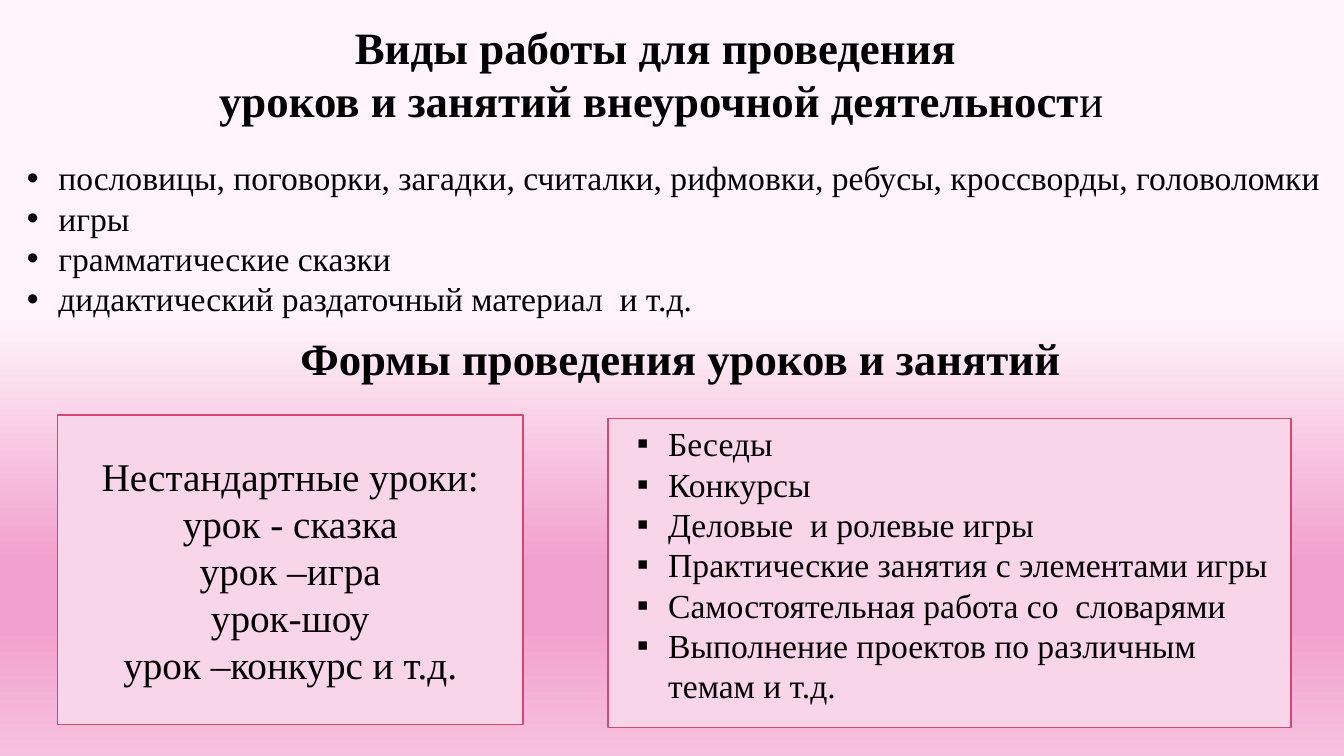
"""Build a slide on kinds of classroom work and forms of lessons."""
from dataclasses import dataclass

from lxml import etree
from pptx import Presentation
from pptx import util as u
from pptx.dml import color
from pptx.enum import shapes, text
from pptx.oxml import ns

COLORS = {
    "text": "000000",
    "panel": "F9D5E9",
    "border": "D54773",
    "pale": "FEF4FA",
    "deep": "F2A1CE",
    "soft": "F7C0DE",
}
BACKGROUND_STOPS = [(42, "pale"), (74, "deep"), (83, "deep"), (100, "soft")]
FONT = "Times New Roman"
BULLET_INDENT = u.Cm(0.79)


@dataclass
class Run:
    """A piece of text with one weight."""
    words: str
    bold: bool = False


@dataclass
class Block:
    """A text block, optionally drawn as a bordered panel."""
    box: tuple[float, float, float, float]
    lines: list[list[Run]]
    size: int = 24
    centered: bool = False
    bullet: str = ""
    wrap: bool = False
    panel: bool = False


def plain(*lines: str) -> list[list[Run]]:
    """Turn strings into one-run lines."""
    return [[Run(line)] for line in lines]


BLOCKS = [
    Block((5.16, 0.36, 23.01, 3.0), [
        [Run("Виды работы для проведения ", True)],
        [Run("уроков и занятий внеурочной деятельност", True), Run("и")],
    ], size=32, centered=True),
    Block((0.43, 3.84, 33.45, 5.13), plain(
        "пословицы, поговорки, загадки, считалки, рифмовки, ребусы, кроссворды, головоломки",
        "игры",
        "грамматические сказки",
        "дидактический раздаточный материал  и т.д.",
    ), bullet="•"),
    Block((7.32, 8.2, 20.14, 1.63),
          [[Run("Формы проведения уроков и занятий", True)]], size=32),
    Block((1.45, 10.46, 11.73, 7.8), plain(
        "Нестандартные уроки:",
        "урок - сказка",
        "урок –игра",
        "урок-шоу",
        "урок –конкурс и т.д.",
    ), size=28, centered=True, wrap=True, panel=True),
    Block((15.32, 10.54, 17.22, 7.8), [], panel=True),
    Block((15.8, 10.54, 16.74, 7.44), plain(
        "Беседы",
        "Конкурсы",
        "Деловые  и ролевые игры",
        "Практические занятия с элементами игры",
        "Самостоятельная работа со  словарями",
        "Выполнение проектов по различным темам и т.д.",
    ), bullet="▪", wrap=True),
]


def rgb(name: str) -> color.RGBColor:
    """Look up a palette colour."""
    return color.RGBColor.from_string(COLORS[name])


def paint_background(slide) -> None:
    """Fill the background with a vertical gradient."""
    fill = slide.background.fill
    fill.gradient()
    fill.gradient_angle = 270
    stops = slide._element.find(".//" + ns.qn("a:gsLst"))
    for stop in list(stops):
        stops.remove(stop)
    for percent, name in BACKGROUND_STOPS:
        stop = etree.SubElement(stops, ns.qn("a:gs"), pos=str(percent * 1000))
        etree.SubElement(stop, ns.qn("a:srgbClr"), val=COLORS[name])


def add_bullet(paragraph, bullet: str) -> None:
    """Give a paragraph a hanging bullet."""
    properties = paragraph._p.get_or_add_pPr()
    properties.set("marL", str(BULLET_INDENT))
    properties.set("indent", str(-BULLET_INDENT))
    etree.SubElement(properties, ns.qn("a:buFont"), typeface="Arial")
    etree.SubElement(properties, ns.qn("a:buChar"), char=bullet)


def write_lines(frame, block: Block) -> None:
    """Write the lines of a block run by run."""
    for index, line in enumerate(block.lines):
        paragraph = frame.add_paragraph() if index else frame.paragraphs[0]
        paragraph.alignment = (text.PP_ALIGN.CENTER if block.centered
                               else text.PP_ALIGN.LEFT)
        if block.bullet:
            add_bullet(paragraph, block.bullet)
        for part in line:
            run = paragraph.add_run()
            run.text = part.words
            run.font.name = FONT
            run.font.size = u.Pt(block.size)
            run.font.bold = part.bold
            run.font.color.rgb = rgb("text")


def draw_block(slide, block: Block) -> None:
    """Draw one block as a panel or a text box."""
    box = [u.Cm(length) for length in block.box]
    if block.panel:
        shape = slide.shapes.add_shape(shapes.MSO_SHAPE.RECTANGLE, *box)
        shape.shadow.inherit = False
        shape.fill.solid()
        shape.fill.fore_color.rgb = rgb("panel")
        shape.line.color.rgb = rgb("border")
        shape.line.width = u.Pt(1)
        shape.text_frame.vertical_anchor = text.MSO_ANCHOR.MIDDLE
    else:
        shape = slide.shapes.add_textbox(*box)
        shape.text_frame.auto_size = text.MSO_AUTO_SIZE.SHAPE_TO_FIT_TEXT
    shape.text_frame.word_wrap = block.wrap
    write_lines(shape.text_frame, block)


def main() -> None:
    """Build and save the presentation."""
    presentation = Presentation()
    presentation.slide_width = u.Cm(33.87)
    presentation.slide_height = u.Cm(19.05)
    slide = presentation.slides.add_slide(presentation.slide_layouts[6])
    paint_background(slide)
    for block in BLOCKS:
        draw_block(slide, block)
    presentation.save("out.pptx")


if __name__ == "__main__":
    main()
